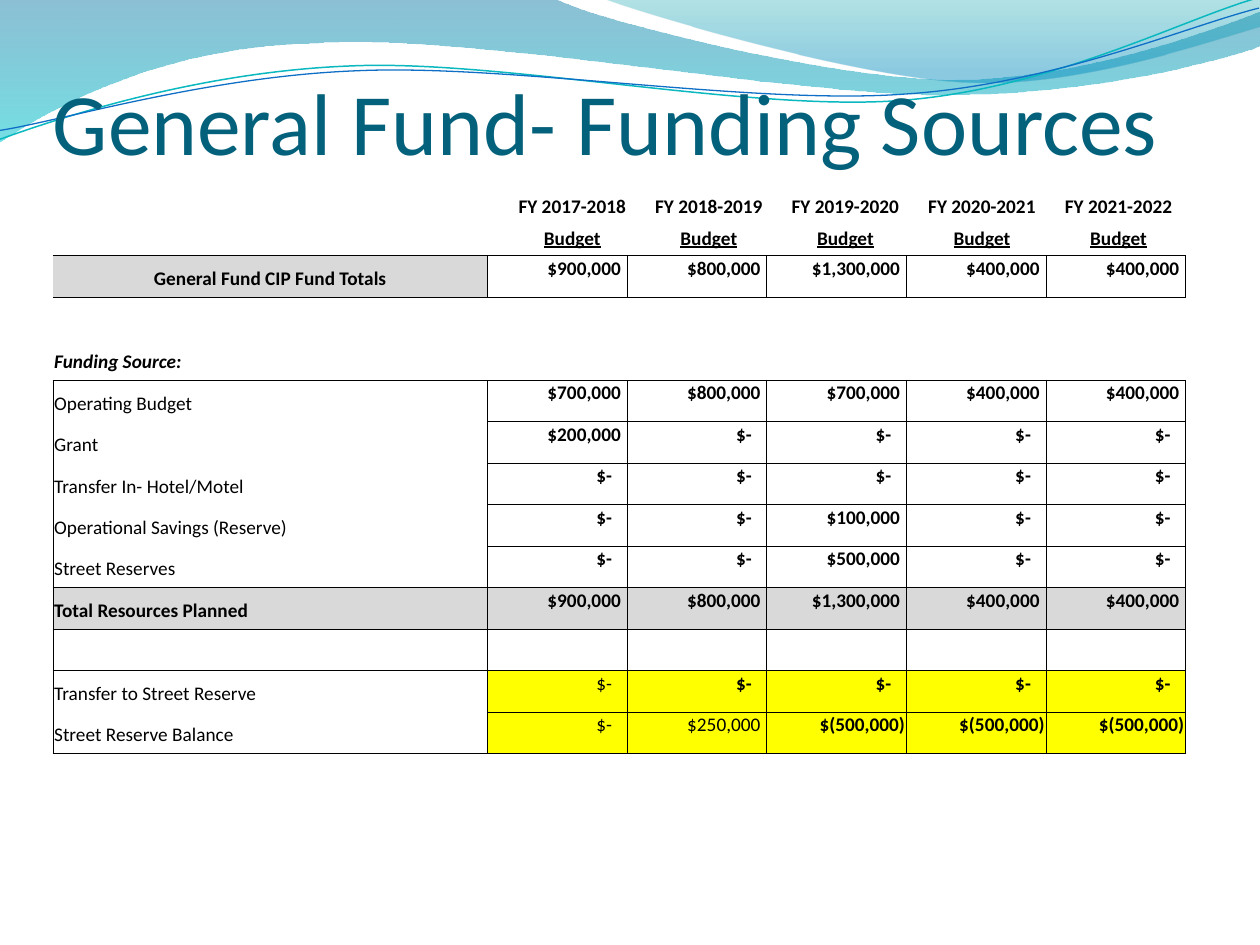
from dataclasses import dataclass

from lxml.etree import SubElement
from pptx import Presentation
from pptx.dml.color import RGBColor
from pptx.enum.text import MSO_ANCHOR, PP_ALIGN
from pptx.oxml.ns import qn
from pptx.util import Emu, Inches, Pt

GRAY, YELLOW, BLACK, TITLE_BLUE = "D9D9D9", "FFFF00", "000000", "04617B"
LEFT, CENTER, RIGHT = PP_ALIGN.LEFT, PP_ALIGN.CENTER, PP_ALIGN.RIGHT


def rgb(code):
    return RGBColor.from_string(code)


def write(frame, text, size=11, color=BLACK, bold=False, italic=False,
          underline=False, align=LEFT, font="Calibri"):
    paragraph = frame.paragraphs[0]
    paragraph.alignment = align
    if not text:
        paragraph._p.get_or_add_endParaRPr().set("sz", str(size * 100))
        return
    run = paragraph.add_run()
    run.text = text
    run.font.name, run.font.size = font, Pt(size)
    run.font.bold, run.font.italic, run.font.underline = bold, italic, underline
    run.font.color.rgb = rgb(color)


def amount_margin(amount):
    """Right margin that lines amounts up in accounting style."""
    if amount == "$-":
        return 0.12
    return 0.01 if amount.endswith(")") else 0.05


@dataclass
class FundRow:
    label: str
    amounts: str = ""
    label_sides: str = "LRTB"
    amount_sides: str = "LRTB"
    label_fill: str = None
    amount_fill: str = None
    bold: bool = False
    italic: bool = False
    align: PP_ALIGN = LEFT
    plain_amounts: int = 0


class SlideBuilder:
    """Places elements on a grid of 10 columns by 7.5 rows."""

    def __init__(self, presentation):
        self.cell_size = presentation.slide_width / 10
        self.slide = presentation.slides.add_slide(presentation.slide_layouts[5])
        self.shapes = self.slide.shapes

    def grid(self, *cells):
        return [Emu(round(n * self.cell_size)) for n in cells]

    def title(self, text, box):
        title = self.shapes.title
        title.left, title.top, title.width, title.height = self.grid(*box)
        frame = title.text_frame
        frame.margin_left = frame.margin_right = frame.margin_bottom = 0
        frame.margin_top = Inches(0.05)
        frame.vertical_anchor = MSO_ANCHOR.BOTTOM
        write(frame, text, size=50, color=TITLE_BLUE)
        self.shapes._spTree.append(title._element)  # in front of the waves

    def outline(self, start, segments, closed):
        """Segments are lines (2 numbers) or cubic curves (6 numbers)."""
        corners = [self.grid(*segment[i:i + 2])
                   for segment in segments for i in range(0, len(segment), 2)]
        builder = self.shapes.build_freeform(*self.grid(*start))
        builder.add_line_segments(corners, close=closed)
        shape = builder.convert_to_shape()
        shape.shadow.inherit = False
        lines = iter(list(shape._element.iter(qn("a:lnTo"))))
        for segment in segments:
            first = next(lines)
            if len(segment) == 6:
                first.tag = qn("a:cubicBezTo")
                for line in (next(lines), next(lines)):
                    first.append(line[0])
                    line.getparent().remove(line)
        return shape

    def wave(self, start, segments, stops):
        """Stops are (position, colour, opacity percent), top to bottom."""
        shape = self.outline(start, segments, closed=True)
        shape.line.fill.background()
        shape.fill.gradient()
        shape.fill.gradient_angle = 270
        for stop, (position, color, _) in zip(shape.fill.gradient_stops, stops):
            stop.position, stop.color.rgb = position, rgb(color)
        for gs, (_, _, opacity) in zip(shape._element.iter(qn("a:gs")), stops):
            SubElement(gs[0], qn("a:alpha"), val=str(opacity * 1000))

    def ripple(self, start, segments, color, width):
        shape = self.outline(start, segments, closed=False)
        shape.rotation = 357.3
        shape.fill.background()
        shape.line.color.rgb, shape.line.width = rgb(color), Pt(width)

    def table(self, row_count, box, widths):
        frame = self.shapes.add_table(row_count, len(widths), *self.grid(*box))
        table = frame.table
        table.first_row = table.horz_banding = False
        for column, width in zip(table.columns, self.grid(*widths)):
            column.width = width
        return table

    def cell(self, cell, text, sides="", fill=None, anchor=MSO_ANCHOR.BOTTOM,
             right=0.01, **format):
        cell.margin_left = cell.margin_top = Inches(0.01)
        cell.margin_right, cell.margin_bottom = Inches(right), Inches(0.05)
        cell.vertical_anchor = anchor
        properties = cell._tc.get_or_add_tcPr()
        for side in "LRTB":
            border = SubElement(properties, qn(f"a:ln{side}"), w=str(Pt(0.5)))
            if side in sides:
                solid = SubElement(border, qn("a:solidFill"))
                SubElement(solid, qn("a:srgbClr"), val=BLACK)
            else:
                SubElement(border, qn("a:noFill"))
        if fill:
            cell.fill.solid()
            cell.fill.fore_color.rgb = rgb(fill)
        else:
            cell.fill.background()
        write(cell.text_frame, text, **format)

    def year_header(self, years, box):
        table = self.table(2, box, [box[2] / len(years)] * len(years))
        for column, year in enumerate(years):
            self.cell(table.cell(0, column), year, bold=True, align=CENTER)
            self.cell(table.cell(1, column), "Budget", bold=True,
                      underline=True, align=CENTER)

    def fund_table(self, fund_rows, box, widths):
        table = self.table(len(fund_rows), box, widths)
        for index, row in enumerate(fund_rows):
            self.cell(table.cell(index, 0), row.label, row.label_sides, row.label_fill,
                      bold=row.bold, italic=row.italic, align=row.align)
            amounts = row.amounts.split() or [""] * (len(widths) - 1)
            for column, amount in enumerate(amounts, 1):
                self.cell(table.cell(index, column), amount, row.amount_sides,
                          row.amount_fill, anchor=MSO_ANCHOR.TOP,
                          right=amount_margin(amount),
                          bold=column > row.plain_amounts, align=RIGHT)


TOTALS = "$900,000 $800,000 $1,300,000 $400,000 $400,000"
NOTHING = "$- $- $- $- $-"
FUND_ROWS = [
    FundRow("General Fund CIP Fund Totals", TOTALS, "RTB", label_fill=GRAY,
            bold=True, align=CENTER),
    FundRow("", label_sides="T", amount_sides="T"),
    FundRow("Funding Source:", label_sides="B", amount_sides="B", bold=True, italic=True),
    FundRow("Operating Budget", "$700,000 $800,000 $700,000 $400,000 $400,000", "LRT"),
    FundRow("Grant", "$200,000 $- $- $- $-", "LR"),
    FundRow("Transfer In- Hotel/Motel", NOTHING, "LR"),
    FundRow("Operational Savings (Reserve)", "$- $- $100,000 $- $-", "LR"),
    FundRow("Street Reserves", "$- $- $500,000 $- $-", "LRB"),
    FundRow("Total Resources Planned", TOTALS, label_fill=GRAY, amount_fill=GRAY, bold=True),
    FundRow(""),
    FundRow("Transfer to Street Reserve", NOTHING, "LRT", amount_fill=YELLOW,
            plain_amounts=1),
    FundRow("Street Reserve Balance", "$- $250,000 $(500,000) $(500,000) $(500,000)",
            "LRB", amount_fill=YELLOW, plain_amounts=2),
]


def main():
    presentation = Presentation()
    presentation.slide_width, presentation.slide_height = Inches(10), Inches(7.5)
    page = SlideBuilder(presentation)

    page.wave((0, 0), [(4.4, -0.01), (4.76, 0.17, 6.64, 0.63, 7.58, 0.63),
                       (8.53, 0.63, 9.58, 0.26, 10, 0.09), (10.01, 0.36),
                       (9.83, 0.44, 8.7, 0.76, 7.46, 0.75),
                       (6.22, 0.75, 3.82, 0.28, 2.57, 0.34),
                       (1.29, 0.36, 0.46, 0.83, -0.01, 1.13)],
              [(0, "0074A1", 45), (1, "00C6CF", 55)])
    page.wave((4.79, -0.01), [(5.09, 0.11, 6.82, 0.62, 7.69, 0.65),
                              (8.56, 0.69, 9.61, 0.32, 10, 0.21), (10, 0)],
              [(0, "00A1A9", 30), (0.8, "008BBF", 45)])
    page.ripple((-0.02, 0.87), [(0.47, 0.72, 1.58, 0.41, 2.78, 0.42),
                                (3.96, 0.42, 5.91, 0.93, 7.12, 0.9),
                                (8.32, 0.87, 9.4, 0.36, 10, 0.22)], "0AB8BF", 0.85)
    page.ripple((-0.02, 0.8), [(0.46, 0.75, 1.64, 0.45, 2.83, 0.46),
                               (4.03, 0.46, 5.96, 0.88, 7.16, 0.85),
                               (8.35, 0.83, 9.42, 0.42, 10.01, 0.3)], "0F6FC6", 0.75)

    page.title("General Fund- Funding Sources", (0.42, 0.42, 9, 0.95))
    years = [f"FY {year}-{year + 1}" for year in range(2017, 2022)]
    page.year_header(years, (4, 1.54, 5.42, 0.49))
    page.fund_table(FUND_ROWS, (0.42, 2.03, 9, 3.95),
                    [3.45] + [5.54 / len(years)] * len(years))
    presentation.save("out.pptx")


if __name__ == "__main__":
    main()
